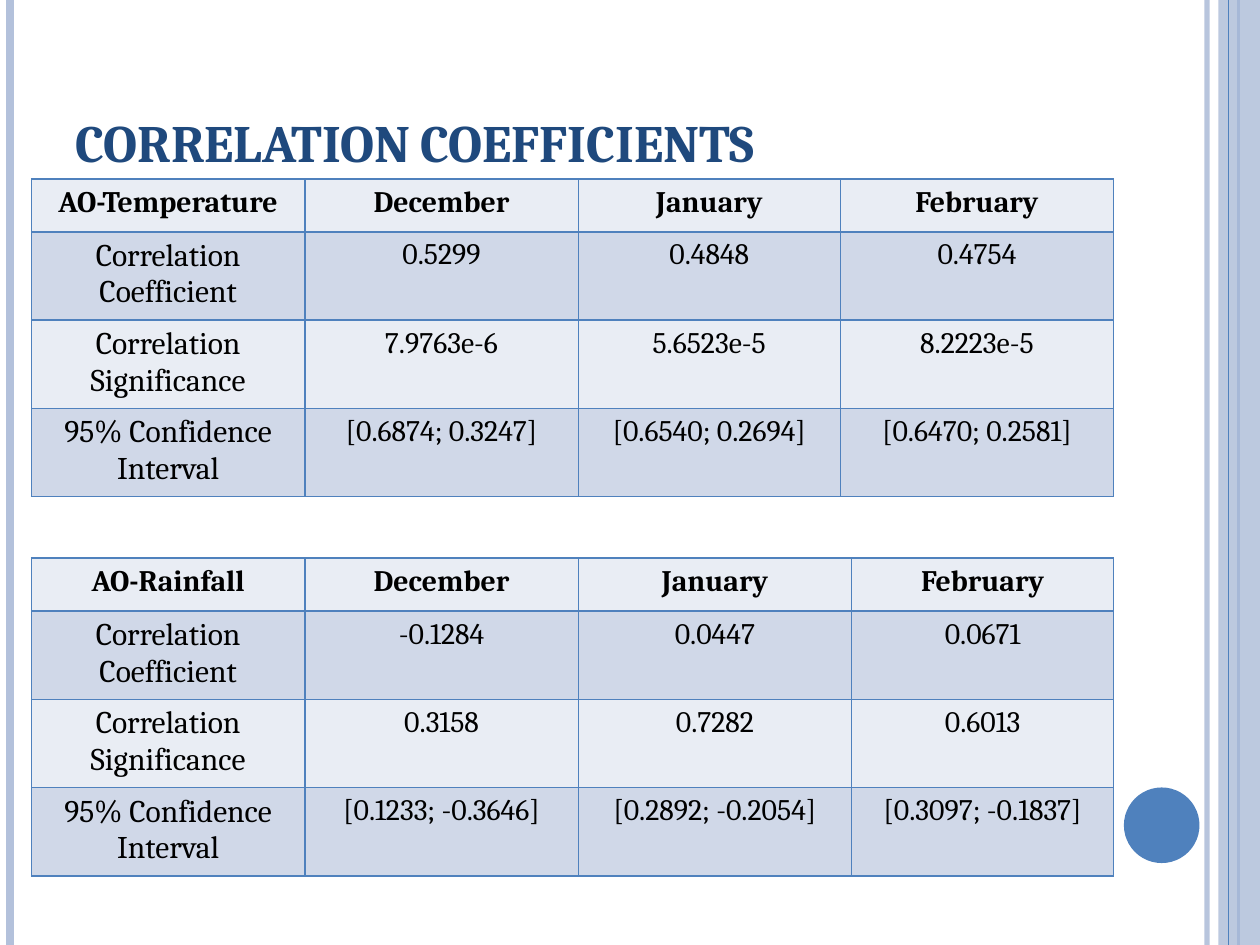
import pptx
import pptx.dml.color
import pptx.enum.shapes
import pptx.enum.text
import pptx.oxml
import pptx.oxml.ns
import pptx.util
from lxml import etree
from pptx.util import Inches

BLUE, PALE_BLUE, NAVY, BLACK = "4F81BD", "B3C1DB", "1F497D", "000000"
BANDS = ("E9EDF4", "D0D8E8")
MONTHS = ["December", "January", "February"]
MEASURES = ["Correlation Coefficient", "Correlation Significance", "95% Confidence Interval"]
ROW_HEIGHTS = (0.42, 0.68, 0.68, 0.68)

# Position, colour, width in points, opacity in percent
OUTER_RULES = [(9.58, PALE_BLUE, 3, 93), (0.08, PALE_BLUE, 4.5, 100), (9.83, BLUE, 1.5, 100)]
INNER_RULE = (9.75, BLUE, 0.75, 100)

# Heading, top, column widths, values by measure
TABLES = [
    ("AO-Temperature", 1.42, (2.17, 2.17, 2.08, 2.17), [
        ["0.5299", "0.4848", "0.4754"],
        ["7.9763e-6", "5.6523e-5", "8.2223e-5"],
        ["[0.6874; 0.3247]", "[0.6540; 0.2694]", "[0.6470; 0.2581]"],
    ]),
    ("AO-Rainfall", 4.43, (2.17, 2.17, 2.17, 2.08), [
        ["-0.1284", "0.0447", "0.0671"],
        ["0.3158", "0.7282", "0.6013"],
        ["[0.1233; -0.3646]", "[0.2892; -0.2054]", "[0.3097; -0.1837]"],
    ]),
]


def set_color(fill, value, opacity=100):
    fill.solid()
    fill.fore_color.rgb = pptx.dml.color.RGBColor.from_string(value)
    if opacity < 100:
        color = fill._xPr.find(".//" + pptx.oxml.ns.qn("a:srgbClr"))
        etree.SubElement(color, pptx.oxml.ns.qn("a:alpha"), val=str(opacity * 1000))


def add_span(para, text, size, color, bold):
    span = para.add_run()
    span.text = text
    font_format = {"name": "Cambria", "size": pptx.util.Pt(size), "bold": bold}
    for name, value in font_format.items():
        setattr(span.font, name, value)
    set_color(span.font.fill, color)
    return span


def add_rule(page, left, color, width, opacity):
    """Draw a vertical line over the full height of the page."""
    rule = page.shapes.add_connector(
        pptx.enum.shapes.MSO_CONNECTOR.STRAIGHT, Inches(left), 0, Inches(left), Inches(7.5))
    rule.line.width = pptx.util.Pt(width)
    set_color(rule.line.fill, color, opacity)
    etree.SubElement(rule._element.spPr, pptx.oxml.ns.qn("a:effectLst"))


def add_plain_shape(page, kind, place, color, opacity=100):
    shape = page.shapes.add_shape(kind, *map(Inches, place))
    shape.shadow.inherit = False
    set_color(shape.fill, color, opacity)
    shape.line.fill.background()


def add_title(page, text):
    box = page.shapes.add_textbox(*map(Inches, (0.5, 0.17, 8.17, 1.25)))
    frame_format = {"word_wrap": True, "vertical_anchor": pptx.enum.text.MSO_ANCHOR.BOTTOM}
    for name, value in frame_format.items():
        setattr(box.text_frame, name, value)
    span = add_span(box.text_frame.paragraphs[0], text, 30, NAVY, True)
    span._r.get_or_add_rPr().set("cap", "small")


def add_borders(cell):
    for side in ("lnL", "lnR", "lnT", "lnB"):
        cell._tc.get_or_add_tcPr().append(pptx.oxml.parse_xml(
            f'<a:{side} {pptx.oxml.ns.nsdecls("a")} w="12700"><a:solidFill>'
            f'<a:srgbClr val="{BLUE}"/></a:solidFill></a:{side}>'))


def add_result_table(page, heading, top, widths, values):
    rows = [[heading] + MONTHS] + [[name] + line for name, line in zip(MEASURES, values)]
    table = page.shapes.add_table(
        len(rows), len(widths), Inches(0.25), Inches(top),
        Inches(sum(widths)), Inches(sum(ROW_HEIGHTS))).table
    table.first_row = table.horz_banding = False
    for column, width in zip(table.columns, widths):
        column.width = Inches(width)
    for r, (texts, height) in enumerate(zip(rows, ROW_HEIGHTS)):
        table.rows[r].height = Inches(height)
        for c, text in enumerate(texts):
            cell = table.cell(r, c)
            add_borders(cell)
            set_color(cell.fill, BANDS[r % 2])
            para = cell.text_frame.paragraphs[0]
            para.alignment = pptx.enum.text.PP_ALIGN.CENTER
            add_span(para, text, 18 if r and not c else 17, BLACK, r == 0)


def main():
    deck = pptx.Presentation()
    deck.slide_width, deck.slide_height = Inches(10), Inches(7.5)
    page = deck.slides.add_slide(deck.slide_layouts[6])
    shapes = pptx.enum.shapes.MSO_SHAPE
    for rule in OUTER_RULES:
        add_rule(page, *rule)
    add_plain_shape(page, shapes.RECTANGLE, (9.67, 0, 0.33, 7.5), PALE_BLUE, 87)
    add_rule(page, *INNER_RULE)
    add_plain_shape(page, shapes.OVAL, (8.92, 6.25, 0.6, 0.6), BLUE)
    add_title(page, "CORRELATION COEFFICIENTS")
    for table in TABLES:
        add_result_table(page, *table)
    deck.save("out.pptx")


if __name__ == "__main__":
    main()
